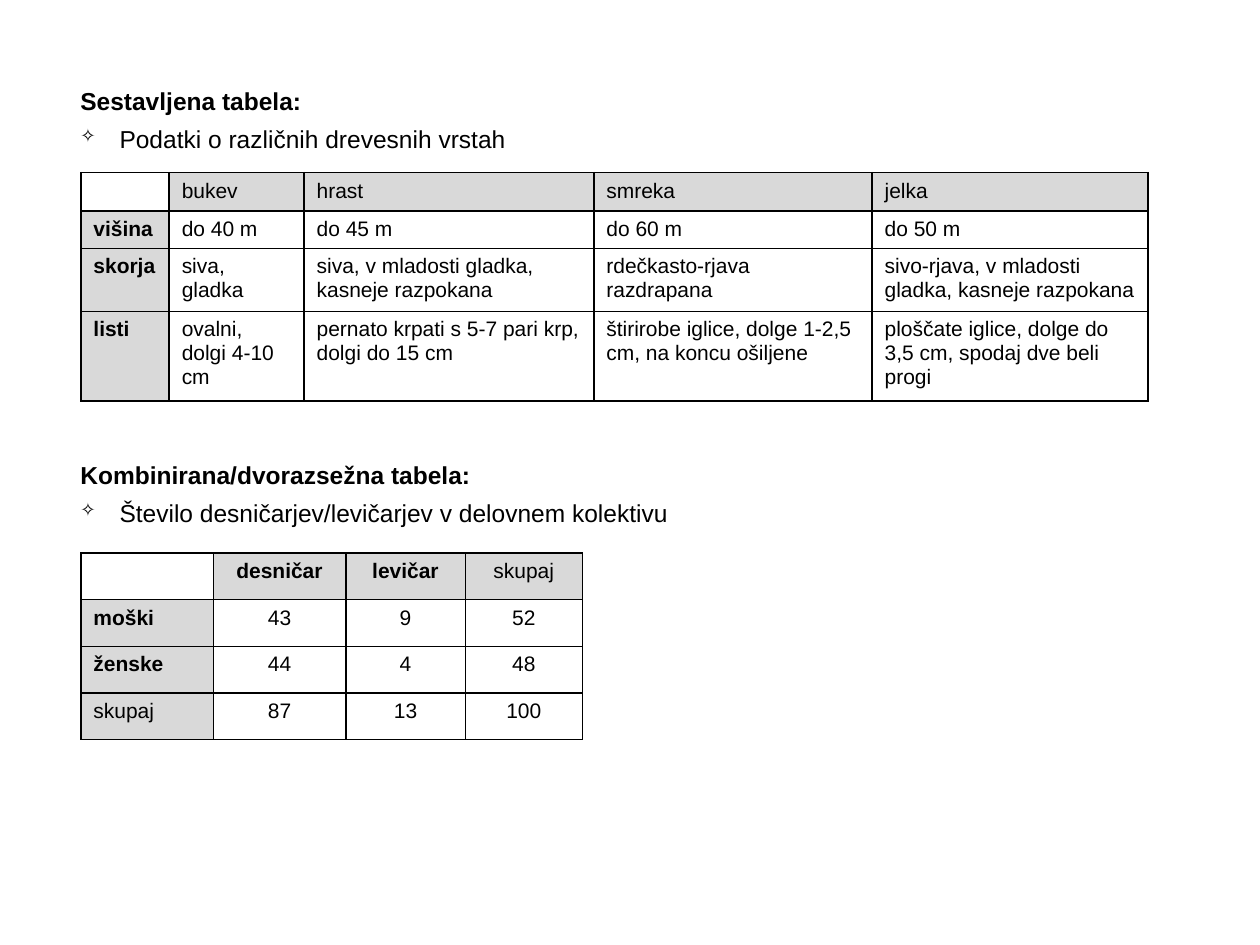
from lxml.etree import SubElement
from pptx import Presentation
from pptx.dml.color import RGBColor
from pptx.enum.text import MSO_AUTO_SIZE, PP_ALIGN
from pptx.oxml.ns import qn
from pptx.util import Cm, Pt


def set_font(font, color, **values):
    for name, value in {"name": "Arial", **values}.items():
        setattr(font, name, value)
    font.color.rgb = RGBColor.from_string(color)


def add_border(cell, color):
    properties = cell._tc.get_or_add_tcPr()
    for position, side in enumerate(("lnL", "lnR", "lnT", "lnB")):
        line = SubElement(properties, qn(f"a:{side}"), w=str(Pt(1)))
        fill = SubElement(line, qn("a:solidFill"))
        SubElement(fill, qn("a:srgbClr"), val=color)
        properties.insert(position, line)


presentation = Presentation()
presentation.slide_width = Cm(25.4)
presentation.slide_height = Cm(19.05)
slide = presentation.slides.add_slide(presentation.slide_layouts[6])

black, gray, white = "000000", "D9D9D9", "FFFFFF"
total = "skupaj"

tables = [
    {
        "top": 11.15,
        "columns": [2.67, 2.67, 2.41, 2.36],
        "rows": [0.94] * 4,
        "bold_header": True,
        "alignment": PP_ALIGN.CENTER,
        "cells": [
            ["", "desničar", "levičar", total],
            ["moški", "43", "9", "52"],
            ["ženske", "44", "4", "48"],
            [total, "87", "13", "100"],
        ],
    },
    {
        "top": 3.48,
        "columns": [1.78, 2.72, 5.84, 5.61, 5.56],
        "rows": [0.75, 0.76, 1.27, 1.8],
        "bold_header": False,
        "alignment": PP_ALIGN.LEFT,
        "cells": [
            ["", "bukev", "hrast", "smreka", "jelka"],
            ["višina", "do 40 m", "do 45 m", "do 60 m", "do 50 m"],
            ["skorja", "siva, gladka", "siva, v mladosti gladka, kasneje razpokana",
             "rdečkasto-rjava razdrapana", "sivo-rjava, v mladosti gladka, kasneje razpokana"],
            ["listi", "ovalni, dolgi 4-10 cm", "pernato krpati s 5-7 pari krp, dolgi do 15 cm",
             "štirirobe iglice, dolge 1-2,5 cm, na koncu ošiljene",
             "ploščate iglice, dolge do 3,5 cm, spodaj dve beli progi"],
        ],
    },
]

for data in tables:
    columns, rows = data["columns"], data["rows"]
    table = slide.shapes.add_table(
        len(rows), len(columns), Cm(1.63), Cm(data["top"]), Cm(sum(columns)), Cm(sum(rows))
    ).table
    table.horz_banding = False
    for column, width in zip(table.columns, columns):
        column.width = Cm(width)
    for row, height in zip(table.rows, rows):
        row.height = Cm(height)
    for row_index, texts in enumerate(data["cells"]):
        for column_index, text in enumerate(texts):
            cell = table.cell(row_index, column_index)
            is_header = text and (row_index == 0 or column_index == 0)
            cell.fill.solid()
            cell.fill.fore_color.rgb = RGBColor.from_string(gray if is_header else white)
            add_border(cell, black)
            paragraph = cell.text_frame.paragraphs[0]
            if not text:
                SubElement(paragraph._p, qn("a:endParaRPr"), sz="1200")
                continue
            paragraph.alignment = data["alignment"] if column_index else PP_ALIGN.LEFT
            bold = text != total and (column_index == 0 or row_index == 0 and data["bold_header"])
            run = paragraph.add_run()
            run.text = text
            set_font(run.font, black, size=Pt(12), bold=bold)

headings = [
    (1.6, 12.7, "Sestavljena tabela:", "Podatki o različnih drevesnih vrstah"),
    (9.14, 22.89, "Kombinirana/dvorazsežna tabela:",
     "Število desničarjev/levičarjev v delovnem kolektivu"),
]

for top, width, title, description in headings:
    text_box = slide.shapes.add_textbox(Cm(1.37), Cm(top), Cm(width), Cm(1.63))
    frame = text_box.text_frame
    frame.word_wrap = True
    frame.auto_size = MSO_AUTO_SIZE.SHAPE_TO_FIT_TEXT
    title_paragraph = frame.paragraphs[0]
    title_paragraph.space_after = Pt(5)
    bullet_paragraph = frame.add_paragraph()
    properties = bullet_paragraph._p.get_or_add_pPr()
    properties.set("marL", str(Cm(0.79)))
    properties.set("indent", str(-Cm(0.79)))
    SubElement(properties, qn("a:buSzPct"), val="75000")
    SubElement(properties, qn("a:buChar"), char="✧")
    for paragraph, text, bold in (
        (title_paragraph, title, True),
        (bullet_paragraph, description, False),
    ):
        run = paragraph.add_run()
        run.text = text
        set_font(run.font, black, size=Pt(14), bold=bold)

presentation.save("out.pptx")
